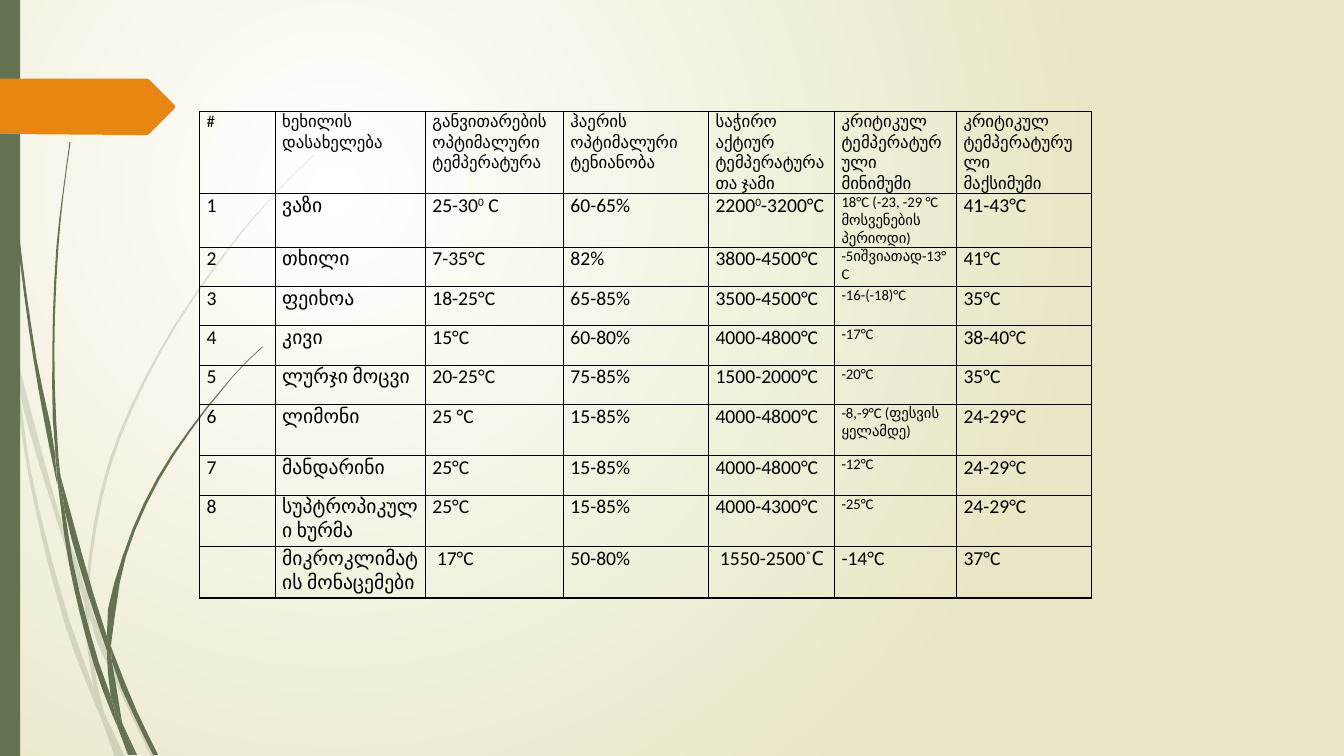
"""Slide with a table of climate requirements for fruit crops beside decorative grass."""
import math

import pptx
import pptx.dml.color
import pptx.enum.shapes
import pptx.oxml
import pptx.oxml.ns
import pptx.util

Pt = pptx.util.Pt

THEME = {
    "green": "647252", "orange": "E78712", "text": "000000", "border": "000000",
    "bg_inner": "FFFFFF", "bg_outer": "E8E6C4",
    "font": "Calibri", "accent_font": "League Spartan",
    "header": 12, "body": 14, "small": 10.5, "border_width": 1,
}

SUP = {"sup": True}
ACCENT = {"font": THEME["accent_font"]}

HEADER = ["#", "ხეხილის დასახელება", "განვითარების ოპტიმალური ტემპერატურა",
          "ჰაერის ოპტიმალური ტენიანობა", "საჭირო აქტიურ ტემპერატურათა ჯამი",
          "კრიტიკულ ტემპერატურული მინიმუმი", "კრიტიკულ\nტემპერატურული\nმაქსიმუმი"]
CROPS = [
    ["1", "ვაზი", [("25-30", {}), ("0", SUP), (" С", {})], "60-65%",
     [("2200", {}), ("0", SUP), ("-3200°С", {})], "18°С (-23, -29 °С მოსვენების პერიოდი)", "41-43°С"],
    ["2", "თხილი", "7-35°С", "82%", "3800-4500°С", "-5იშვიათად-13°С", "41°С"],
    ["3", "ფეიხოა", "18-25°С", "65-85%", "3500-4500°С", "-16-(-18)°С", "35°С"],
    ["4", "კივი", "15°С", "60-80%", "4000-4800°С", "-17°С", "38-40°С"],
    ["5", "ლურჯი მოცვი", "20-25°С", "75-85%", "1500-2000°С", "-20°С", "35°С"],
    ["6", "ლიმონი", "25 °С", "15-85%", "4000-4800°С", "-8,-9°С (ფესვის ყელამდე)", "24-29°С"],
    ["7", "მანდარინი", "25°С", "15-85%", "4000-4800°С", "-12°С", "24-29°С"],
    ["8", "სუპტროპიკული ხურმა", "25°С", "15-85%", "4000-4300°С", "-25°С", "24-29°С"],
]
MICROCLIMATE = ["", "მიკროკლიმატის მონაცემები", " 17°С", "50-80%",
                [(" 1550-2500", {}), ("°С", ACCENT)], "-14°С", "37°С"]
MINIMUM_COL = 5

SLIDE = (960, 540)
TABLE_AT = (142.56, 79.92, 636.48, 344.88)
COLS = [54, 107.28, 98.64, 103.68, 90, 87.12, 96.48]
ROWS = [41.04, 30.96, 28.08, 28.08, 28.08, 28.08, 36.72, 28.08, 36.72, 36.72]
BAR = (0, 0, 14.4, 540)

GRID = 0.72
STEP_LENGTH = 30
CORNER_COS = 0.8
PALE_GRASS = [
    (11, 350, 9, 322, 0, 282, 0, 299, 10, 344),
    (58, 522, 84, 599, 85, 586, 62, 520, 14, 345, 17, 376),
    (92, 607, 88, 596, 88, 610, 123, 694, 150, 751, 155, 751, 127, 692),
    (119, 751, 124, 751, 105, 711),
    (93, 683, 70, 619, 31, 469, 17, 376, 11, 350, 28, 470, 65, 621, 92, 693, 101, 714, 99, 707),
    (84, 599, 87, 646, 93, 683, 96, 692, 105, 711, 103, 706, 91, 646, 88, 610, 88, 608),
    (88, 584, 110, 462, 160, 349, 229, 245, 268, 198, 290, 175, 312, 154, 312, 153, 289, 175,
     268, 197, 228, 244, 158, 348, 107, 461, 85, 584, 85, 586, 88, 596),
    (101, 714, 114, 751, 119, 751),
    (88, 608, 88, 610, 88, 596, 85, 586, 84, 599),
    (96, 692, 93, 683, 99, 707, 101, 714, 119, 751, 105, 711),
]
DARK_GRASS = [
    (7, 110, 17, 233, 33, 355, 56, 477, 57, 481, 55, 457, 55, 453, 36, 355, 19, 232, 8, 109,
     5, 48, 4, 0, 3, 0, 4, 48),
    (88, 592, 106, 645, 106, 633, 106, 631, 93, 590, 60, 472, 64, 505),
    (113, 649, 110, 641, 111, 656, 132, 708, 152, 749, 157, 749, 136, 706),
    (110, 691, 98, 657, 72, 556, 64, 505, 57, 477, 68, 557, 93, 659, 111, 708, 117, 722, 116, 717),
    (60, 472, 58, 453, 54, 349, 58, 245, 63, 193, 70, 141, 69, 141, 62, 193, 56, 245, 52, 349, 55, 449),
    (133, 749, 136, 749, 122, 719),
    (57, 477, 64, 505, 60, 472, 55, 449, 55, 453),
    (111, 633, 125, 552, 158, 476, 205, 406, 231, 374, 245, 359, 261, 344, 260, 344, 245, 358,
     231, 373, 204, 405, 156, 474, 122, 551, 106, 631, 110, 641),
    (117, 722, 127, 749, 131, 749),
    (106, 645, 110, 691, 116, 706, 122, 719, 121, 716, 111, 656, 109, 651),
    (106, 645, 109, 651, 111, 656, 110, 641, 106, 631, 106, 633),
    (116, 706, 110, 691, 116, 717, 117, 722, 130, 749, 133, 749, 122, 719),
]
ARROW = (173, 108, 148, 133, 146, 134, 136, 134, 0, 133, 0, 78, 136, 78, 146, 78, 148, 79, 173, 104, 174, 106)


def rgb(name):
    return pptx.dml.color.RGBColor.from_string(THEME[name])


def paint(sp, color, alpha=None):
    sp.shadow.inherit = False
    sp.fill.solid()
    sp.fill.fore_color.rgb = rgb(color)
    sp.line.fill.background()
    if alpha:
        clr = sp._element.spPr.find(".//" + pptx.oxml.ns.qn("a:srgbClr"))
        clr.append(pptx.oxml.parse_xml(f'<a:alpha {pptx.oxml.ns.nsdecls("a")} val="{alpha * 1000}"/>'))


def pairs(flat):
    return list(zip(flat[::2], flat[1::2]))


def direction(a, b):
    size = math.dist(a, b)
    return (b[0] - a[0]) / size, (b[1] - a[1]) / size


def smooth(points):
    """Sample a closed curve through the points, keeping sharp corners."""
    n = len(points)
    heads = [direction(points[i], points[(i + 1) % n]) for i in range(n)]

    def tangent(i, own):
        u, v = heads[i - 1], heads[i % n]
        if u[0] * v[0] + u[1] * v[1] < CORNER_COS:
            return own
        return direction((0, 0), (u[0] + v[0], u[1] + v[1]))

    out = []
    for i, a in enumerate(points):
        j = (i + 1) % n
        b, length = points[j], math.dist(a, points[j])
        reach, steps = length / 3, max(1, round(length / STEP_LENGTH))
        ta, tb = tangent(i, heads[i]), tangent(j, heads[i])
        for t in (k / steps for k in range(steps)):
            u = 1 - t
            out.append(tuple(u**3 * a[d] + 3 * u * u * t * (a[d] + reach * ta[d])
                             + 3 * u * t * t * (b[d] - reach * tb[d]) + t**3 * b[d] for d in (0, 1)))
    return out


def add_outline(shapes, points, color, alpha=None):
    pts = [(Pt(x * GRID), Pt(y * GRID)) for x, y in points]
    fb = shapes.build_freeform(*pts[0], scale=1.0)
    fb.add_line_segments(pts[1:], close=True)
    paint(fb.convert_to_shape(), color, alpha)


def add_background(s):
    fill = s.background.fill
    fill.gradient()
    for stop, name in zip(fill.gradient_stops, ("bg_inner", "bg_outer")):
        stop.color.rgb = rgb(name)
    grad = s._element.find(".//" + pptx.oxml.ns.qn("a:gradFill"))
    grad.replace(grad.find(pptx.oxml.ns.qn("a:lin")), pptx.oxml.parse_xml(
        f'<a:path {pptx.oxml.ns.nsdecls("a")} path="circle">'
        '<a:fillToRect l="50000" t="50000" r="100000" b="100000"/></a:path>'))


def fill_cell(cell, content, size):
    margins = {"margin_left": 5.04, "margin_right": 5.04, "margin_top": 0, "margin_bottom": 0}
    for name, value in margins.items():
        setattr(cell, name, Pt(value))
    paragraphs = [content] if isinstance(content, list) else [[(t, {})] for t in content.split("\n") if t]
    tf = cell.text_frame
    for i, runs in enumerate(paragraphs):
        p = tf.add_paragraph() if i else tf.paragraphs[0]
        for text, style in runs:
            r = p.add_run()
            r.text = text
            for name, value in {"size": Pt(size), "name": style.get("font", THEME["font"])}.items():
                setattr(r.font, name, value)
            r.font.color.rgb = rgb("text")
            if style.get("sup"):
                r._r.get_or_add_rPr().set("baseline", "30000")
    cell.fill.background()
    tc_pr = cell._tc.get_or_add_tcPr()
    for i, side in enumerate(("lnL", "lnR", "lnT", "lnB")):
        tc_pr.insert(i, pptx.oxml.parse_xml(
            f'<a:{side} {pptx.oxml.ns.nsdecls("a")} w="{Pt(THEME["border_width"])}"><a:solidFill>'
            f'<a:srgbClr val="{THEME["border"]}"/></a:solidFill></a:{side}>'))


def add_crop_table(s):
    rows = [HEADER, *CROPS, MICROCLIMATE]
    table = s.shapes.add_table(len(rows), len(COLS), *map(Pt, TABLE_AT)).table
    table.first_row = table.horz_banding = False
    for col, width in zip(table.columns, COLS):
        col.width = Pt(width)
    for i, row in enumerate(rows):
        table.rows[i].height = Pt(ROWS[i])
        for j, content in enumerate(row):
            small = j == MINIMUM_COL and row in CROPS
            size = THEME["header" if i == 0 else "small" if small else "body"]
            fill_cell(table.cell(i, j), content, size)


def main():
    prs = pptx.Presentation()
    prs.slide_width, prs.slide_height = map(Pt, SLIDE)
    s = prs.slides.add_slide(prs.slide_layouts[6])
    add_background(s)
    for blades, alpha in ((PALE_GRASS, 20), (DARK_GRASS, None)):
        group = s.shapes.add_group_shape()
        for blade in blades:
            add_outline(group.shapes, smooth(pairs(blade)), "green", alpha)
    paint(s.shapes.add_shape(pptx.enum.shapes.MSO_SHAPE.RECTANGLE, *map(Pt, BAR)), "green")
    add_outline(s.shapes, pairs(ARROW), "orange")
    add_crop_table(s)
    prs.save("out.pptx")


if __name__ == "__main__":
    main()
